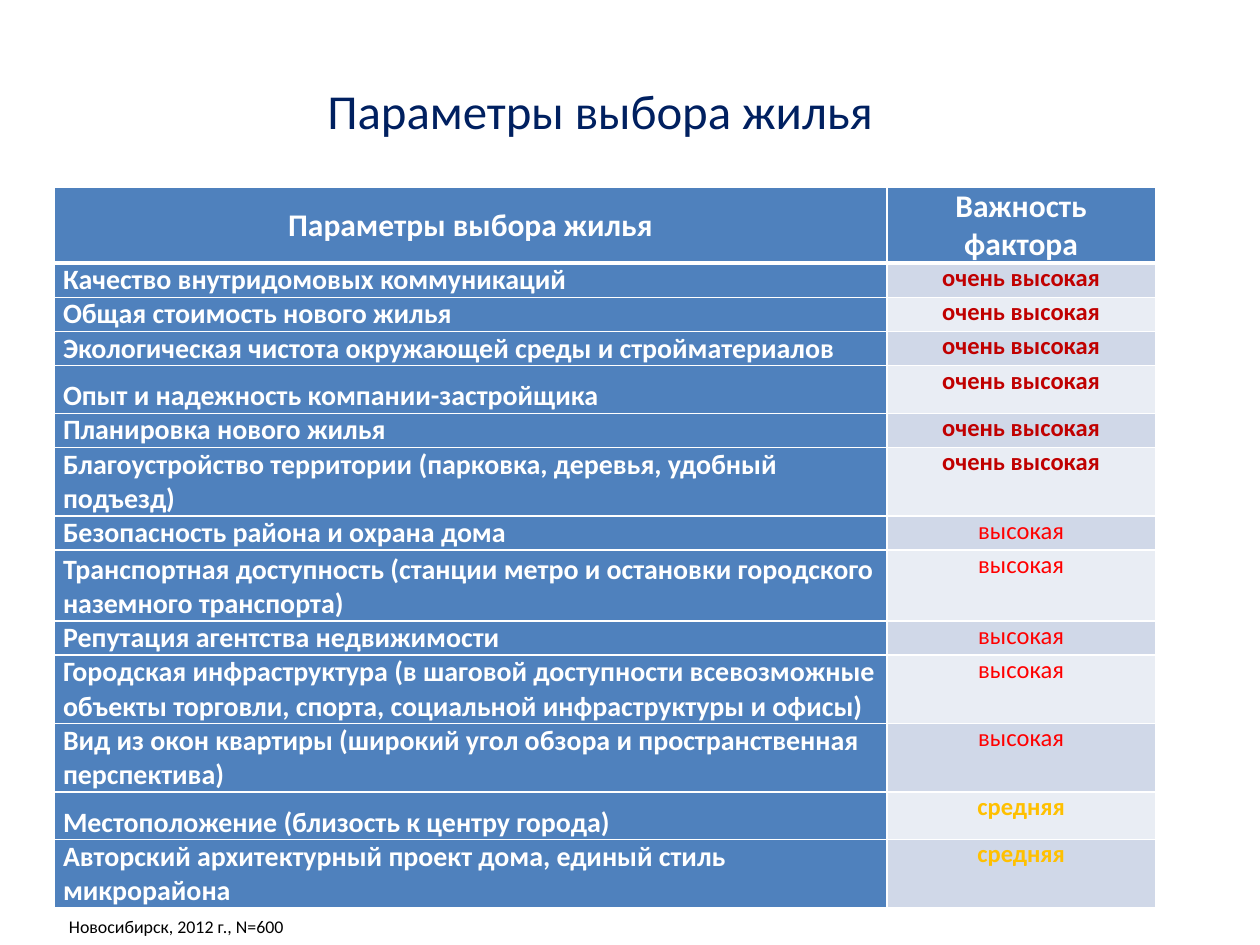
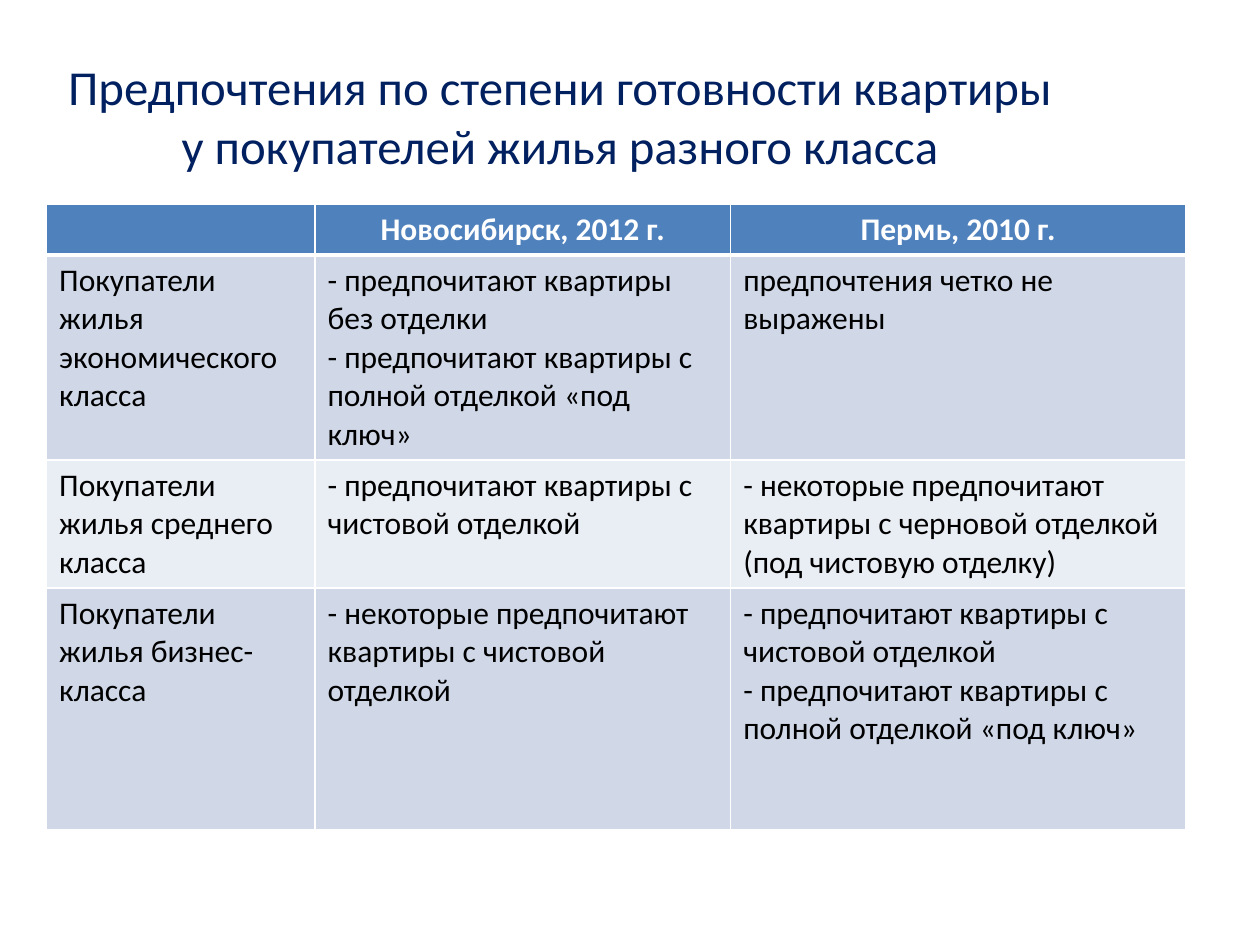
import pptx
import pptx.util
import pptx.dml.color
import pptx.enum.text
import pptx.oxml.ns
from dataclasses import dataclass
from lxml import etree

Cm, Pt = pptx.util.Cm, pptx.util.Pt
ALIGN = pptx.enum.text.PP_ALIGN
ANCHOR = pptx.enum.text.MSO_ANCHOR


@dataclass(frozen=True)
class Theme:
    font: str = "Calibri"
    navy: str = "002060"
    blue: str = "4F81BD"
    white: str = "FFFFFF"
    black: str = "000000"
    bands: tuple = ("D0D8E8", "E9EDF4")
    title: float = 27.9
    head: float = 18
    label: float = 16
    grade: float = 14
    note: float = 10.2


THEME = Theme()

# Importance grades: colour and weight
GRADES = {
    "очень высокая": ("C00000", True),
    "высокая": ("FF0000", False),
    "средняя": ("FFC000", True),
}

# Row heights by the number of text lines, plus a roomy single line
ONE, TALL, TWO = 0.69, 0.96, 1.38

FACTORS = [
    ("Качество внутридомовых коммуникаций", "очень высокая", ONE),
    ("Общая стоимость нового жилья", "очень высокая", ONE),
    ("Экологическая чистота окружающей среды и стройматериалов", "очень высокая", ONE),
    ("Опыт и надежность компании-застройщика", "очень высокая", TALL),
    ("Планировка нового жилья", "очень высокая", ONE),
    ("Благоустройство территории (парковка, деревья, удобный подъезд)", "очень высокая", TWO),
    ("Безопасность района и охрана дома", "высокая", ONE),
    ("Транспортная доступность (станции метро и остановки городского наземного транспорта)",
     "высокая", 1.43),
    ("Репутация агентства недвижимости", "высокая", ONE),
    ("Городская инфраструктура (в шаговой доступности всевозможные объекты торговли, "
     "спорта, социальной инфраструктуры и офисы)", "высокая", TWO),
    ("Вид из окон квартиры (широкий угол обзора и пространственная перспектива)",
     "высокая", TWO),
    ("Местоположение (близость к центру города)", "средняя", TALL),
    ("Авторский архитектурный проект дома, единый стиль микрорайона", "средняя", TWO),
]

BUYERS = [
    ("Покупатели жилья экономического класса",
     "- предпочитают квартиры без отделки\n"
     "- предпочитают квартиры с полной отделкой «под ключ»",
     "предпочтения четко не выражены", 4.13),
    ("Покупатели жилья среднего класса",
     "- предпочитают квартиры с чистовой отделкой",
     "- некоторые предпочитают квартиры с черновой отделкой (под чистовую отделку)", 2.58),
    ("Покупатели жилья бизнес-класса",
     "- некоторые предпочитают квартиры с чистовой отделкой",
     "- предпочитают квартиры с чистовой отделкой\n"
     "- предпочитают квартиры с полной отделкой «под ключ»", 4.88),
]


def rgb(color):
    return pptx.dml.color.RGBColor.from_string(color)


def write(frame, text, size=THEME.head, color=THEME.black, bold=False, align=ALIGN.LEFT):
    """Fill a text frame, one paragraph per line of text."""
    frame.word_wrap = True
    frame.text = text
    for para in frame.paragraphs:
        para.alignment = align
        font = para.font
        font.name, font.size, font.bold = THEME.font, Pt(size), bold
        font.color.rgb = rgb(color)


def add_text(slide, box, text, anchor=ANCHOR.TOP, **style):
    frame = slide.shapes.add_textbox(*map(Cm, box)).text_frame
    write(frame, text, **style)
    frame.vertical_anchor = anchor


def add_title(slide, box, text):
    add_text(slide, box, text, ANCHOR.MIDDLE, size=THEME.title,
             color=THEME.navy, align=ALIGN.CENTER)


def edge(cell, **widths):
    """Draw white cell borders; widths are in points by side."""
    props = cell._tc.get_or_add_tcPr()
    qn = pptx.oxml.ns.qn
    for side in "LRTB":
        line = etree.SubElement(props, qn("a:ln" + side), w=str(Pt(widths.get(side, 1))))
        fill = etree.SubElement(line, qn("a:solidFill"))
        etree.SubElement(fill, qn("a:srgbClr"), val=THEME.white)


def set_cell(cell, text, fill, anchor=ANCHOR.TOP, tight=False, **style):
    cell.fill.solid()
    cell.fill.fore_color.rgb = rgb(fill)
    cell.vertical_anchor = anchor
    if tight:
        cell.margin_left = cell.margin_right = Cm(0.18)
        cell.margin_top = cell.margin_bottom = 0
    write(cell.text_frame, text, **style)


def add_grid(slide, left, top, cols, rows, heads, tight=False):
    """Place a bordered table with its heading row; return the table."""
    frame = slide.shapes.add_table(len(rows), len(cols), Cm(left), Cm(top),
                                   Cm(sum(cols)), Cm(sum(rows)))
    table = frame.table
    for col, width in zip(table.columns, cols):
        col.width = Cm(width)
    for i, (row, height) in enumerate(zip(table.rows, rows)):
        row.height = Cm(height)
        for cell in row.cells:
            edge(cell, T=3 if i == 1 else 1, B=3 if i == 0 else 1)
    for cell, head in zip(table.rows[0].cells, heads):
        set_cell(cell, head, THEME.blue, ANCHOR.MIDDLE if tight else ANCHOR.TOP, tight,
                 color=THEME.white, bold=True, align=ALIGN.CENTER)
    return table


def factor_slide(slide):
    add_title(slide, (3.3, 0.62, 17.6, 3.18), "Параметры выбора жилья")

    # Factors with their importance
    table = add_grid(slide, 1.09, 3.78, (16.79, 5.41),
                     [1.52] + [height for *_, height in FACTORS],
                     ("Параметры выбора жилья", "Важность фактора"), tight=True)
    for i, (name, grade, _) in enumerate(FACTORS):
        color, bold = GRADES[grade]
        set_cell(table.cell(i + 1, 0), name, THEME.blue, ANCHOR.BOTTOM, True,
                 size=THEME.label, color=THEME.white, bold=True)
        set_cell(table.cell(i + 1, 1), grade, THEME.bands[i % 2], tight=True,
                 size=THEME.grade, color=color, bold=bold, align=ALIGN.CENTER)

    # Survey note
    add_text(slide, (1.14, 18.34, 5.21, 0.61), "Новосибирск, 2012 г., N=600", size=THEME.note)


def buyer_slide(slide):
    add_title(slide, (0.89, 0.74, 20.8, 3.18),
              "Предпочтения по степени готовности квартиры у покупателей жилья разного класса")

    # Buyer classes by city
    table = add_grid(slide, 0.94, 4.11, (5.41, 8.38, 9.17),
                     [1.03] + [height for *_, height in BUYERS],
                     ("", "Новосибирск, 2012 г.", "Пермь, 2010 г."))
    for i, (*texts, _) in enumerate(BUYERS):
        for cell, text in zip(table.rows[i + 1].cells, texts):
            set_cell(cell, text, THEME.bands[i % 2])


def main():
    deck = pptx.Presentation()
    deck.slide_width, deck.slide_height = Cm(25.4), Cm(19.05)
    for build in (factor_slide, buyer_slide):
        build(deck.slides.add_slide(deck.slide_layouts[6]))
    deck.save("out.pptx")


if __name__ == "__main__":
    main()
